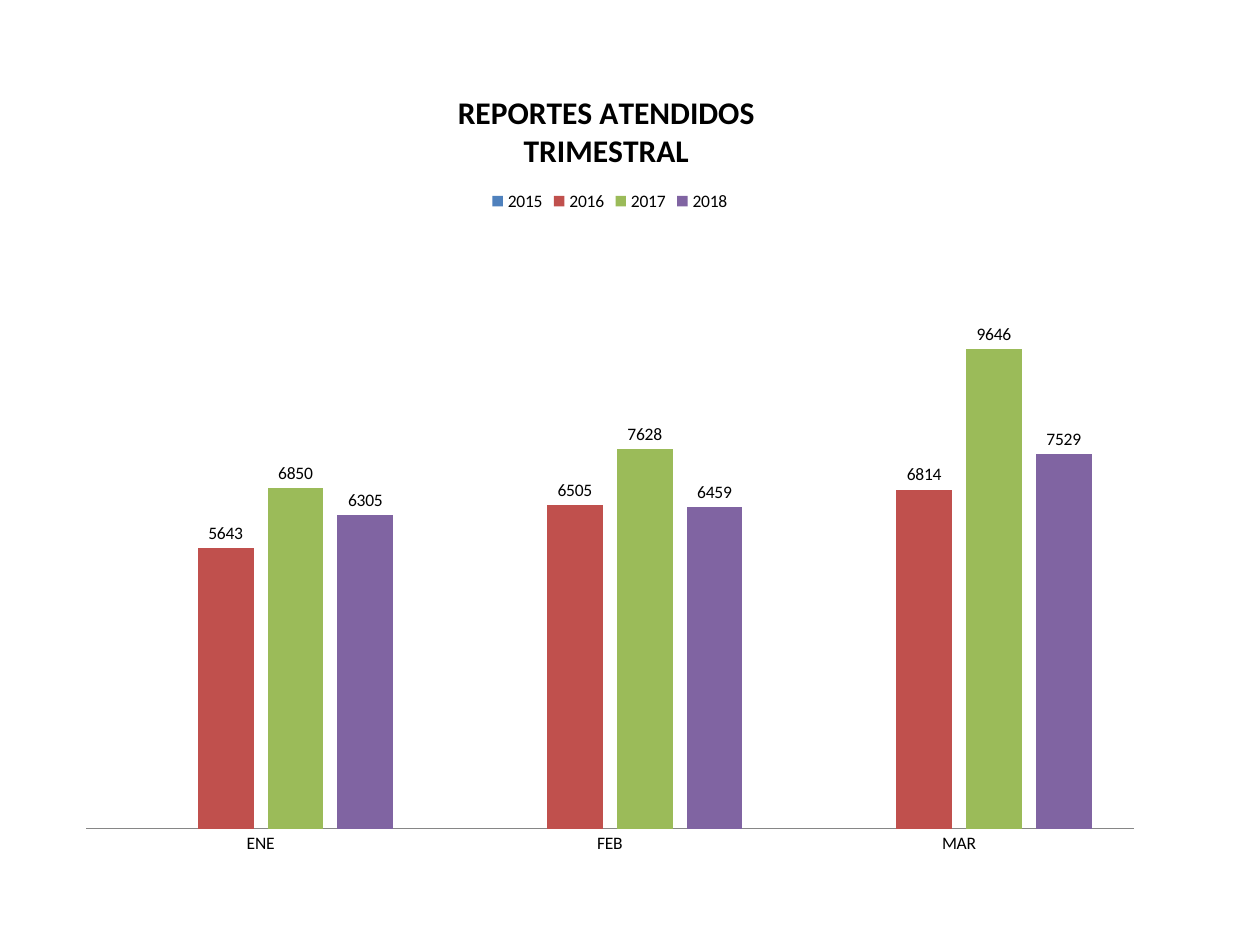
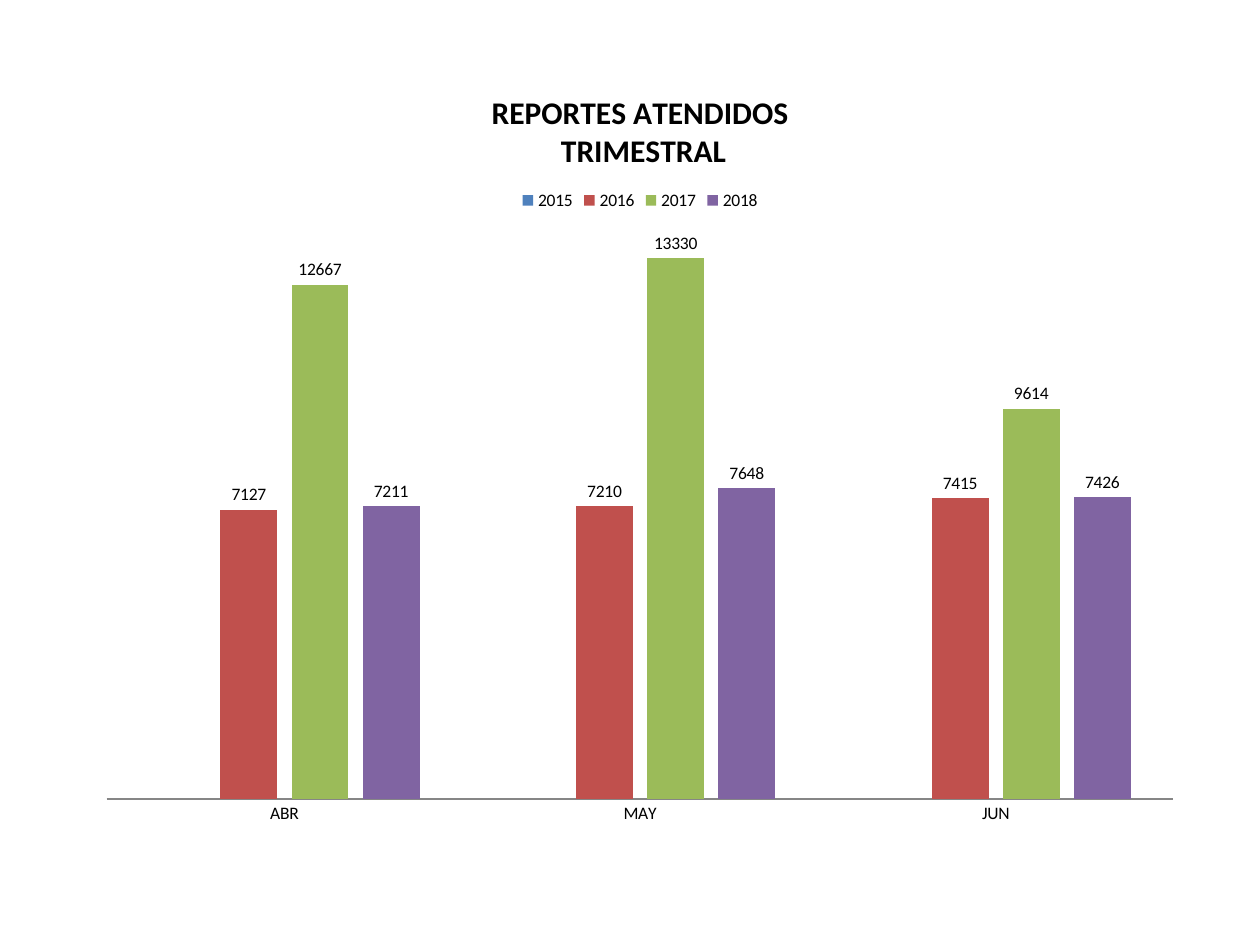
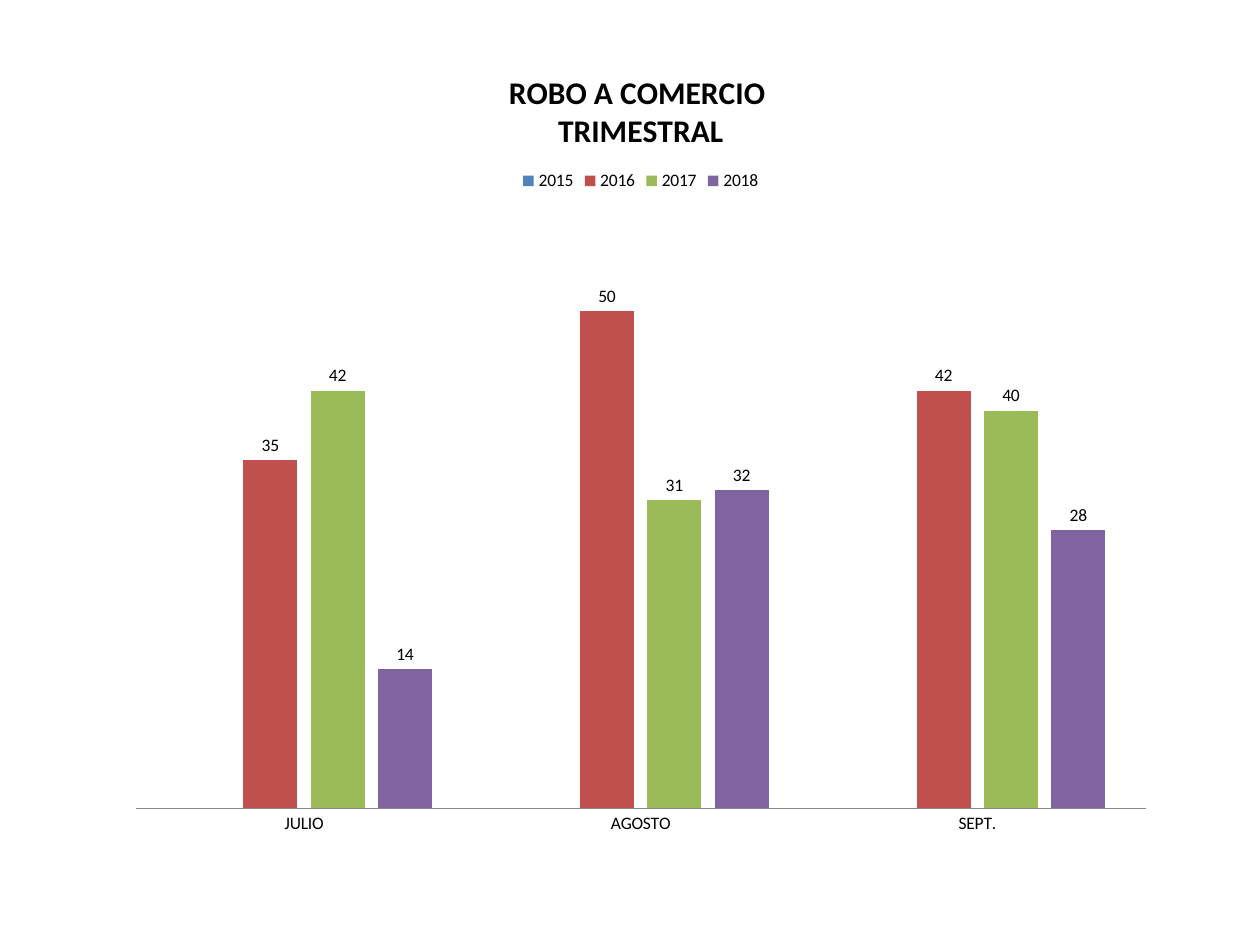
from dataclasses import dataclass

from pptx import Presentation
from pptx.chart.data import CategoryChartData
from pptx.dml.color import RGBColor
from pptx.enum.chart import (
    XL_CHART_TYPE, XL_LABEL_POSITION, XL_LEGEND_POSITION, XL_TICK_MARK)
from pptx.util import Inches, Pt

COLUMNS = XL_CHART_TYPE.COLUMN_CLUSTERED
OUTER = XL_LABEL_POSITION.OUTSIDE_END
TOP = XL_LEGEND_POSITION.TOP
NO_TICK = XL_TICK_MARK.NONE

WIDE, HIGH = Inches(10), Inches(7.5)
BLANK = 6
YEARS = ("2015", "2016", "2017", "2018")
EMPTY = (None, None, None)


@dataclass(frozen=True)
class Theme:
    font: str = "Calibri"
    ink: str = "000000"
    axis: str = "868686"
    bars: tuple = ("4F81BD", "C0504D", "9BBB59", "8064A2")
    title: int = 18
    text: int = 10
    line: float = 0.75


THEME = Theme()


@dataclass(frozen=True)
class Quarter:
    """One slide's chart; area is left, top, width, height in % of the slide."""
    title: str
    area: tuple
    months: tuple
    counts: tuple
    top: int


QUARTERS = (
    Quarter("REPORTES ATENDIDOS \nTRIMESTRAL ", (5.1, 6.93, 86.6, 85.07),
            ("ENE", "FEB", "MAR"),
            (EMPTY, (5643, 6505, 6814), (6850, 7628, 9646), (6305, 6459, 7529)),
            12000),
    Quarter("REPORTES ATENDIDOS\n TRIMESTRAL", (6.7, 6.93, 88.2, 81.87),
            ("ABR", "MAY", "JUN"),
            (EMPTY, (7127, 7210, 7415), (12667, 13330, 9614), (7211, 7648, 7426)),
            14000),
    Quarter("ROBO A COMERCIO \nTRIMESTRAL", (9.1, 4.8, 83.5, 85.07),
            ("JULIO", "AGOSTO", "SEPT."),
            (EMPTY, (35, 50, 42), (42, 31, 40), (14, 32, 28)),
            60),
)


def color(code):
    return RGBColor.from_string(code)


def place(area):
    """Turn percent of the slide into lengths."""
    return [int(share * size / 100)
            for share, size in zip(area, (WIDE, HIGH, WIDE, HIGH))]


def style(font, size, bold=False):
    font.name = THEME.font
    font.size = Pt(size)
    font.bold = bold
    font.color.rgb = color(THEME.ink)


def set_title(chart, text):
    chart.has_title = True
    title = chart.chart_title
    title.include_in_layout = False
    title.text_frame.text = text
    for para in title.text_frame.paragraphs:
        for run in para.runs:
            style(run.font, THEME.title, True)


def set_legend(chart):
    chart.has_legend = True
    chart.legend.position = TOP
    chart.legend.include_in_layout = False


def set_axes(chart, top):
    months, values = chart.category_axis, chart.value_axis
    months.major_tick_mark = NO_TICK
    months.format.line.color.rgb = color(THEME.axis)
    months.format.line.width = Pt(THEME.line)
    values.has_major_gridlines = False
    values.minimum_scale = 0
    values.maximum_scale = top
    values.visible = False


def set_bars(plot):
    plot.gap_width = 150
    plot.overlap = -25
    plot.vary_by_categories = False
    for bars, code in zip(plot.series, THEME.bars):
        bars.format.fill.solid()
        bars.format.fill.fore_color.rgb = color(code)
        bars.invert_if_negative = False
        labels = bars.data_labels
        labels.show_value = True
        labels.position = OUTER


def add_quarter(deck, quarter):
    slide = deck.slides.add_slide(deck.slide_layouts[BLANK])
    data = CategoryChartData()
    data.categories = quarter.months
    for year, counts in zip(YEARS, quarter.counts):
        data.add_series(year, counts)
    chart = slide.shapes.add_chart(COLUMNS, *place(quarter.area), data).chart
    style(chart.font, THEME.text)
    set_title(chart, quarter.title)
    set_legend(chart)
    set_axes(chart, quarter.top)
    set_bars(chart.plots[0])


def main():
    deck = Presentation()
    deck.slide_width, deck.slide_height = WIDE, HIGH
    for quarter in QUARTERS:
        add_quarter(deck, quarter)
    deck.save("out.pptx")


if __name__ == "__main__":
    main()
